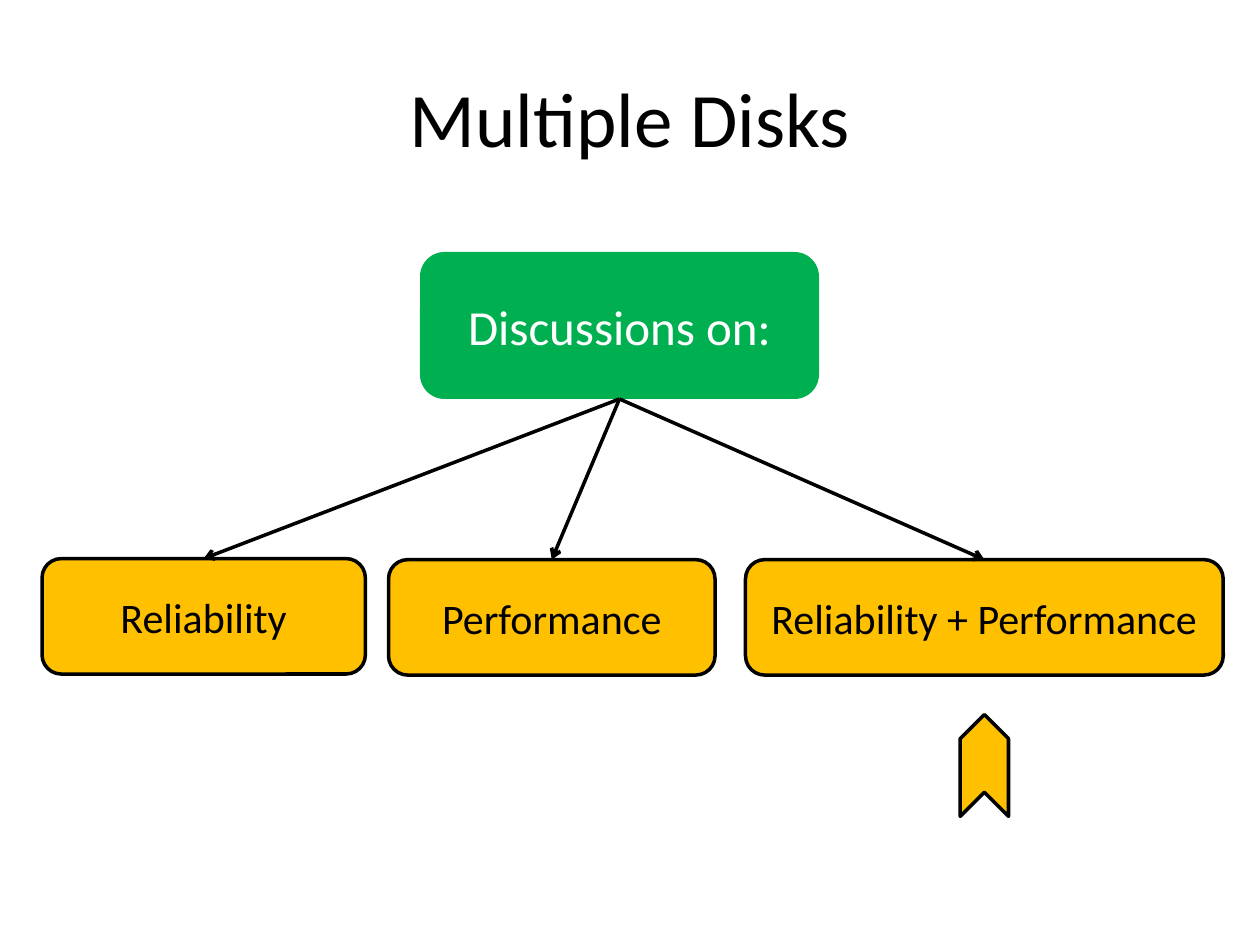
from lxml import etree
from pptx import Presentation
from pptx.dml.color import RGBColor
from pptx.enum.shapes import MSO_CONNECTOR, MSO_SHAPE
from pptx.enum.text import MSO_ANCHOR, PP_ALIGN
from pptx.oxml.ns import qn
from pptx.util import Inches, Pt

ROUNDED = MSO_SHAPE.ROUNDED_RECTANGLE
CHEVRON = MSO_SHAPE.CHEVRON
STRAIGHT = MSO_CONNECTOR.STRAIGHT
MIDDLE = MSO_ANCHOR.MIDDLE
CENTER = PP_ALIGN.CENTER
TITLE_ONLY = 5
TOP_SITE, BOTTOM_SITE = 0, 2

COLUMNS, ROWS = 120, 90
BLACK, WHITE, GREEN, AMBER = "000000", "FFFFFF", "00B050", "FFC000"


def color(hex_string):
    return RGBColor.from_string(hex_string)


class Diagram:
    """Styled elements on one slide, placed in grid columns and rows."""

    font = "Calibri"
    line_width = Pt(2)

    def __init__(self, presentation):
        self.column = presentation.slide_width / COLUMNS
        self.row = presentation.slide_height / ROWS
        self.slide = presentation.slides.add_slide(
            presentation.slide_layouts[TITLE_ONLY])

    def frame(self, left, top, width, height):
        return (round(left * self.column), round(top * self.row),
                round(width * self.column), round(height * self.row))

    def label(self, shape, text, size, ink):
        text_frame = shape.text_frame
        text_frame.text = text
        text_frame.word_wrap = True
        text_frame.vertical_anchor = MIDDLE
        paragraph = text_frame.paragraphs[0]
        paragraph.alignment = CENTER
        paragraph.font.name = self.font
        paragraph.font.size = Pt(size)
        paragraph.font.color.rgb = color(ink)

    def title(self, text, *place):
        heading = self.slide.shapes.title
        heading.left, heading.top, heading.width, heading.height = self.frame(*place)
        self.label(heading, text, 44, BLACK)

    def outline(self, line):
        line.color.rgb = color(BLACK)
        line.width = self.line_width

    def shape(self, preset, fill, *place, outlined=True):
        shape = self.slide.shapes.add_shape(preset, *self.frame(*place))
        shape.shadow.inherit = False
        shape.fill.solid()
        shape.fill.fore_color.rgb = color(fill)
        if outlined:
            self.outline(shape.line)
        else:
            shape.line.fill.background()
        return shape

    def root(self, text, *place):
        box = self.shape(ROUNDED, GREEN, *place, outlined=False)
        self.label(box, text, 28, WHITE)
        return box

    def topic(self, text, *place):
        box = self.shape(ROUNDED, AMBER, *place)
        self.label(box, text, 24, BLACK)
        box.text_frame.margin_top = box.text_frame.margin_bottom = 0
        return box

    def pointer_up(self, *place):
        self.shape(CHEVRON, AMBER, *place).rotation = 270

    def arrow(self, source, target):
        arrow = self.slide.shapes.add_connector(STRAIGHT, 0, 0, 0, 0)
        arrow.begin_connect(source, BOTTOM_SITE)
        arrow.end_connect(target, TOP_SITE)
        self.outline(arrow.line)
        properties = arrow._element.spPr
        etree.SubElement(properties.find(qn("a:ln")), qn("a:tailEnd"), type="arrow")
        etree.SubElement(properties, qn("a:effectLst"))


def main():
    presentation = Presentation()
    presentation.slide_width, presentation.slide_height = Inches(10), Inches(7.5)
    diagram = Diagram(presentation)

    diagram.title("Multiple Disks", 6, 3.6, 108, 15)
    discussions = diagram.root("Discussions on:", 40, 24, 38, 14)
    topics = [
        ("Reliability", 4, 53.2, 30.8),
        ("Performance", 37, 53.3, 31.1),
        ("Reliability + Performance", 71, 53.3, 45.5),
    ]
    for text, left, top, width in topics:
        diagram.arrow(discussions, diagram.topic(text, left, top, width, 11))
    diagram.pointer_up(88.9, 70.6, 9.7, 4.6)

    presentation.save("out.pptx")


if __name__ == "__main__":
    main()
